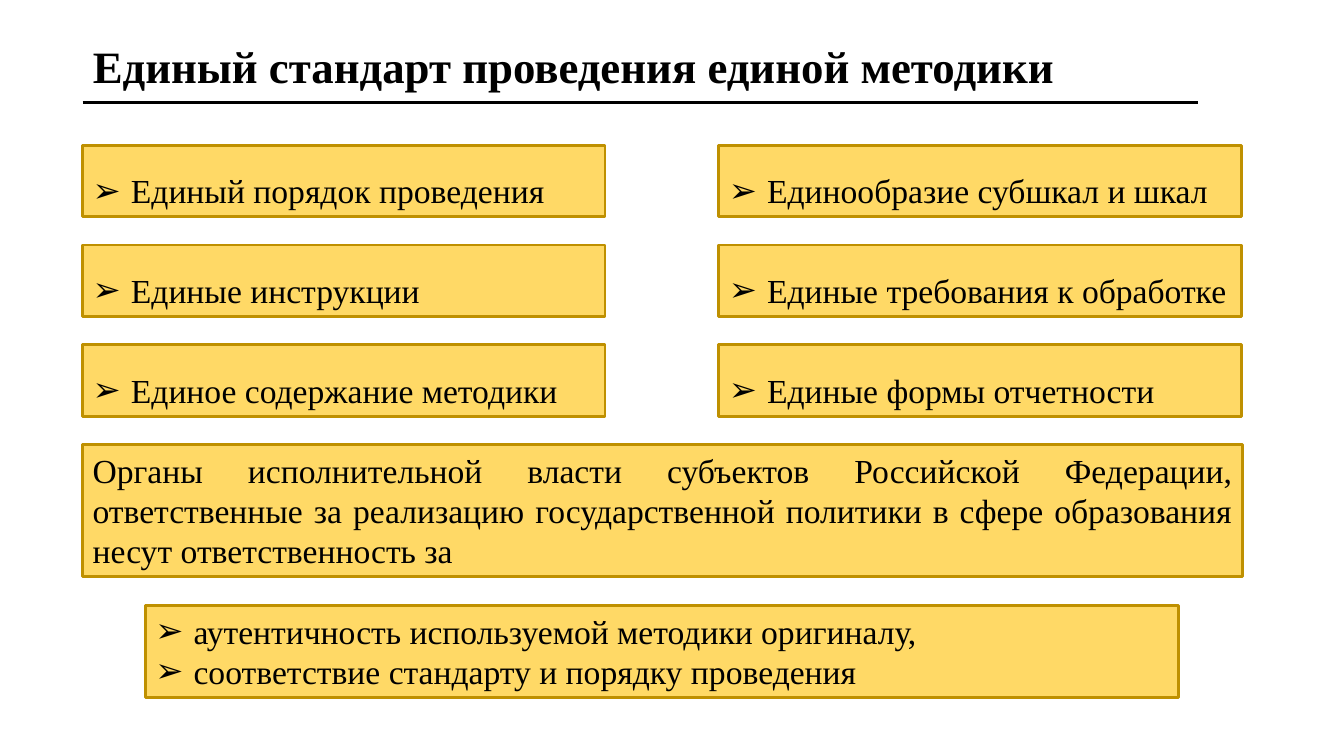
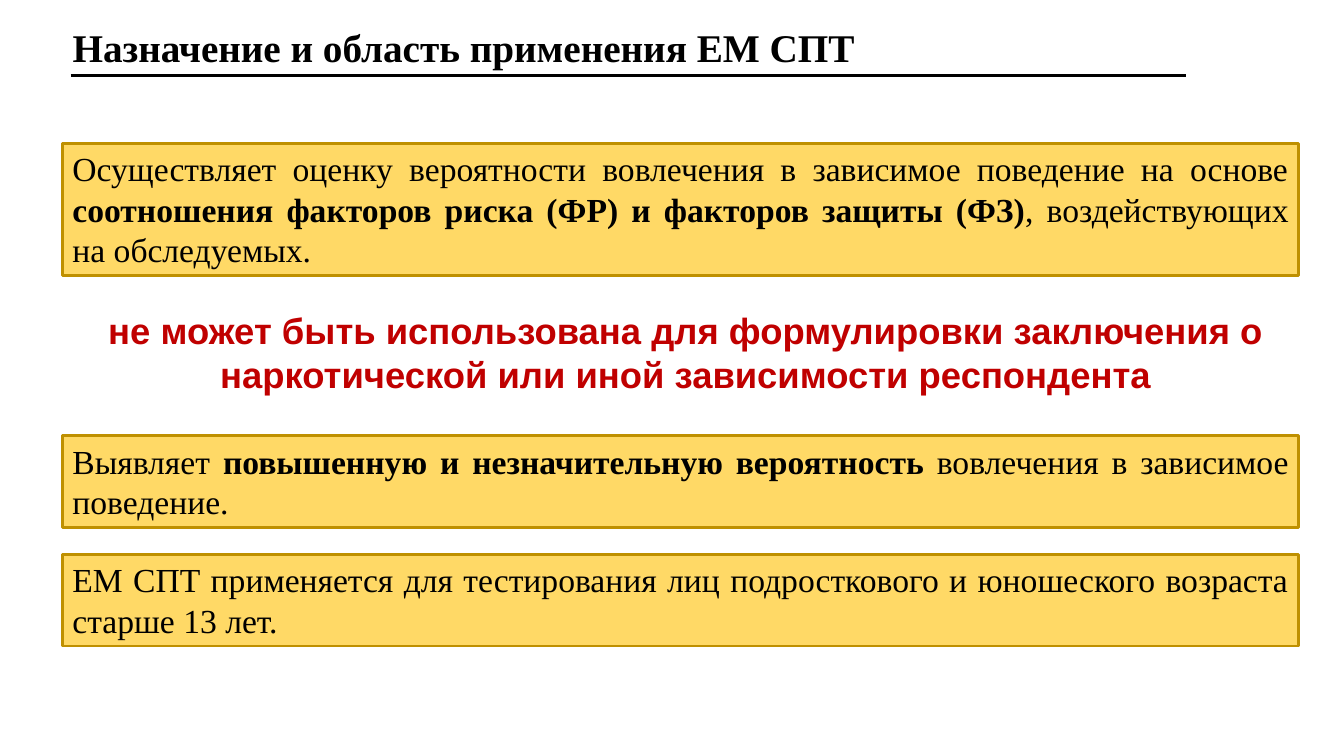
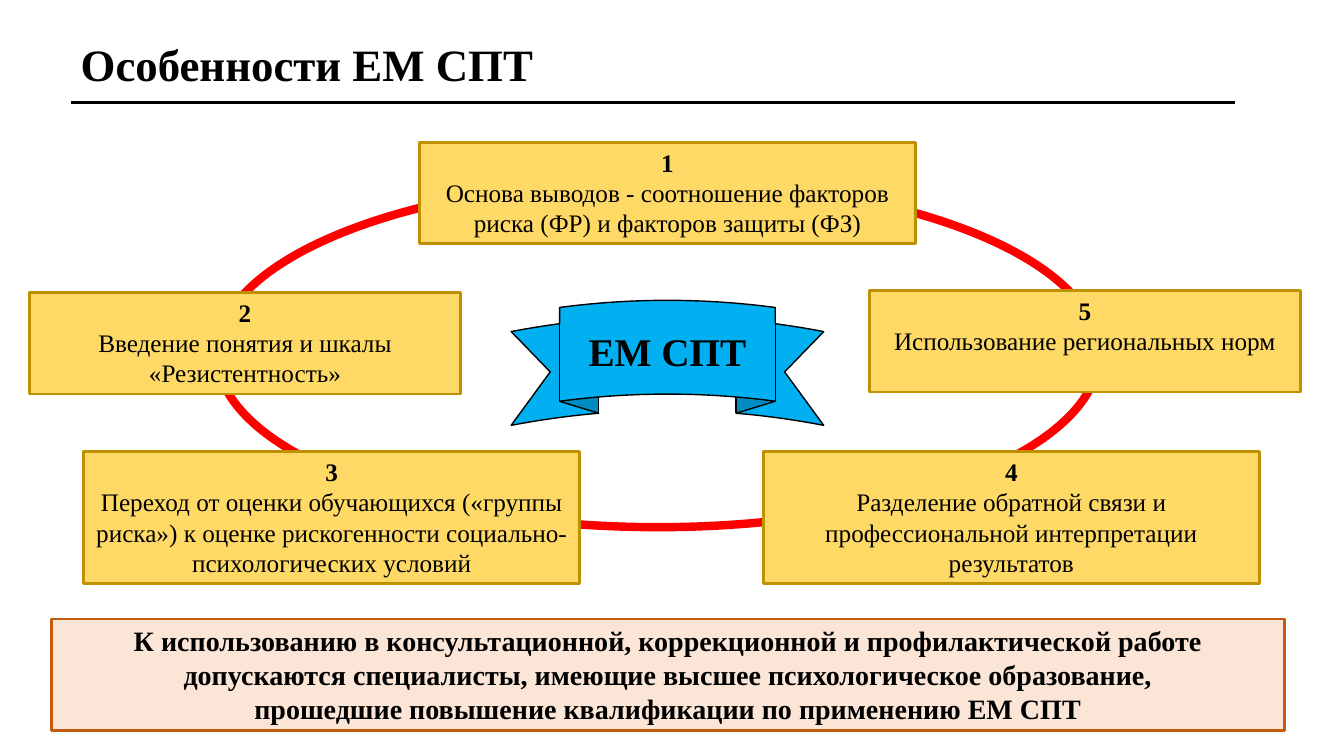
from dataclasses import dataclass

from pptx import Presentation
from pptx import util as u
from pptx.dml.color import RGBColor
from pptx.enum import shapes, text
from pptx.oxml import ns
from lxml import etree

# Shared style
COLORS = {
    "black": "000000",
    "gold": "FFD966",
    "dark_gold": "BF9000",
    "peach": "FBE5D6",
    "rust": "C55A11",
    "crimson": "C00000",
    "red": "FF0000",
    "sky": "00B0F0",
}
SERIF, SANS = "Times New Roman", "Arial"
BULLET, BULLET_INDENT = "➢", 0.38
TITLE_AND_BODY, TITLE_ONLY = 1, 5
LEFT, CENTER, JUSTIFY = (
    text.PP_ALIGN.LEFT, text.PP_ALIGN.CENTER, text.PP_ALIGN.JUSTIFY)


@dataclass(frozen=True)
class Area:
    left: float
    top: float
    width: float
    height: float

    def lengths(self) -> tuple:
        return tuple(u.Inches(n) for n in
                     (self.left, self.top, self.width, self.height))


@dataclass(frozen=True)
class Span:
    words: str
    bold: bool = False


@dataclass(frozen=True)
class TextStyle:
    size: int
    align: text.PP_ALIGN = LEFT
    font: str = SERIF
    color: str = "black"
    spacing: float = 1.0
    bullet: bool = False


@dataclass(frozen=True)
class Heading:
    words: str
    area: Area
    size: int
    rule_start: float
    rule_end: float
    rule_top: float


@dataclass(frozen=True)
class Card:
    number: int
    words: str
    area: Area


BODY = TextStyle(24, JUSTIFY)
BULLETS = TextStyle(24, bullet=True)
TALL_BULLETS = TextStyle(24, spacing=1.5, bullet=True)
CARD = TextStyle(18, CENTER)
BANNER = TextStyle(20, CENTER)
RIBBON = TextStyle(28, CENTER)
WARNING = TextStyle(26, CENTER, SANS, "crimson")


def rgb(name: str) -> RGBColor:
    return RGBColor.from_string(COLORS[name])


# Text
def add_bullet(para) -> None:
    props = para._p.get_or_add_pPr()
    props.set("marL", str(u.Inches(BULLET_INDENT)))
    props.set("indent", str(u.Inches(-BULLET_INDENT)))
    etree.SubElement(props, ns.qn("a:buFont"), typeface=SANS)
    etree.SubElement(props, ns.qn("a:buChar"), char=BULLET)


def write(box, paras: list[list[Span]], style: TextStyle,
          anchor=text.MSO_ANCHOR.TOP) -> None:
    frame = box.text_frame
    frame.word_wrap = True
    frame.auto_size = text.MSO_AUTO_SIZE.NONE
    frame.vertical_anchor = anchor
    for index, spans in enumerate(paras):
        para = frame.add_paragraph() if index else frame.paragraphs[0]
        para.alignment = style.align
        para.line_spacing = style.spacing
        para.space_before = u.Pt(0)
        if style.bullet:
            add_bullet(para)
        for span in spans:
            run = para.add_run()
            run.text = span.words
            run.font.name = style.font
            run.font.size = u.Pt(style.size)
            run.font.bold = span.bold
            run.font.color.rgb = rgb(style.color)


# Shapes
def place(box, area: Area) -> None:
    box.left, box.top, box.width, box.height = area.lengths()


def paint(box, fill: str | None, line: str, width: float = 2) -> None:
    box.shadow.inherit = False
    if fill:
        box.fill.solid()
        box.fill.fore_color.rgb = rgb(fill)
    else:
        box.fill.background()
    box.line.color.rgb = rgb(line)
    box.line.width = u.Pt(width)


def add_box(page, area: Area, paras: list[list[Span]], style: TextStyle,
            fill: str = "gold", line: str = "dark_gold") -> None:
    box = page.shapes.add_shape(shapes.MSO_SHAPE.RECTANGLE, *area.lengths())
    paint(box, fill, line)
    write(box, paras, style)


def add_page(deck, heading: Heading, layout: int = TITLE_ONLY):
    page = deck.slides.add_slide(deck.slide_layouts[layout])
    title = page.shapes.title
    place(title, heading.area)
    write(title, [[Span(heading.words, True)]], TextStyle(heading.size))
    top = u.Inches(heading.rule_top)
    rule = page.shapes.add_connector(
        shapes.MSO_CONNECTOR.STRAIGHT,
        u.Inches(heading.rule_start), top, u.Inches(heading.rule_end), top)
    rule.line.color.rgb = rgb("black")
    rule.line.width = u.Pt(2)
    etree.SubElement(rule._element.spPr, ns.qn("a:effectLst"))
    return page


# Slide 1: the single standard
def add_standard(deck) -> None:
    page = add_page(deck, Heading(
        "Единый стандарт проведения единой методики",
        Area(0.82, 0.33, 11, 0.64), 32, 0.82, 11.88, 1.02), TITLE_AND_BODY)
    columns = {
        0.82: ["Единый порядок проведения", "Единые инструкции",
               "Единое содержание методики"],
        7.13: ["Единообразие субшкал и шкал", "Единые требования к обработке",
               "Единые формы отчетности"],
    }
    for left, items in columns.items():
        for row, item in enumerate(items):
            add_box(page, Area(left, 1.44 + 0.99 * row, 5.18, 0.71),
                    [[Span(item)]], TALL_BULLETS)
    add_box(page, Area(0.82, 4.41, 11.5, 1.31), [[Span(
        "Органы исполнительной власти субъектов Российской Федерации, "
        "ответственные за реализацию государственной политики в сфере "
        "образования несут ответственность за")]], BODY)
    duties = page.placeholders[1]
    place(duties, Area(1.44, 6.01, 10.25, 0.91))
    paint(duties, "gold", "dark_gold")
    write(duties, [[Span("аутентичность используемой методики оригиналу,")],
                   [Span("соответствие стандарту и порядку проведения")]],
          BULLETS)


# Slide 2: purpose and scope
def add_purpose(deck) -> None:
    page = add_page(deck, Heading(
        "Назначение и область применения ЕМ СПТ",
        Area(0.62, 0.18, 11, 0.57), 28, 0.7, 11.76, 0.75))
    statements = [
        (1.42, 1.31, [
            Span("Осуществляет оценку вероятности вовлечения в зависимое "
                 "поведение на основе "),
            Span("соотношения факторов риска (ФР) и факторов защиты (ФЗ)",
                 True),
            Span(", воздействующих на обследуемых.")]),
        (4.32, 0.91, [
            Span("Выявляет "),
            Span("повышенную и незначительную вероятность ", True),
            Span("вовлечения в зависимое поведение.")]),
        (5.5, 0.91, [
            Span("ЕМ СПТ применяется для тестирования лиц подросткового и "
                 "юношеского возраста старше 13 лет.")]),
    ]
    for top, height, spans in statements:
        add_box(page, Area(0.62, top, 12.26, height), [spans], BODY)
    warning = page.shapes.add_textbox(*Area(0.95, 3.01, 11.71, 0.98).lengths())
    write(warning, [[Span(
        "не может быть использована для формулировки заключения о "
        "наркотической или иной зависимости респондента", True)]], WARNING)


# Slide 3: features around a ring
def add_features(deck) -> None:
    page = add_page(deck, Heading(
        "Особенности ЕМ СПТ",
        Area(0.7, 0.31, 11, 0.64), 32, 0.7, 12.25, 1.02))
    ring = page.shapes.add_shape(
        shapes.MSO_SHAPE.OVAL, *Area(2.15, 1.79, 8.75, 3.44).lengths())
    paint(ring, None, "red", 6)
    ribbon = page.shapes.add_shape(
        shapes.MSO_SHAPE.CURVED_UP_RIBBON,
        *Area(5.07, 2.98, 3.1, 1.24).lengths())
    for index, value in enumerate((0.25, 0.69, 0.12)):
        ribbon.adjustments[index] = value
    paint(ribbon, "sky", "black", 1)
    write(ribbon, [[Span("ЕМ СПТ", True)]], RIBBON, text.MSO_ANCHOR.MIDDLE)

    cards = [
        Card(1, "Основа выводов - соотношение факторов риска (ФР) и "
                "факторов защиты (ФЗ)", Area(4.16, 1.41, 4.92, 1.01)),
        Card(2, "Введение понятия и шкалы «Резистентность»",
             Area(0.29, 2.9, 4.28, 1.01)),
        Card(3, "Переход от оценки обучающихся («группы риска») к оценке "
                "рискогенности социально-психологических условий",
             Area(0.83, 4.48, 4.92, 1.31)),
        Card(4, "Разделение обратной связи и профессиональной "
                "интерпретации результатов", Area(7.57, 4.48, 4.92, 1.31)),
        Card(5, "Использование региональных норм",
             Area(8.62, 2.88, 4.28, 1.01)),
    ]
    for card in cards:
        add_box(page, card.area,
                [[Span(str(card.number), True)], [Span(card.words)]], CARD)

    requirements = [
        "К использованию в консультационной, коррекционной и "
        "профилактической работе",
        "допускаются специалисты, имеющие высшее психологическое образование,",
        "прошедшие повышение квалификации по применению ЕМ СПТ",
    ]
    add_box(page, Area(0.51, 6.14, 12.23, 1.11),
            [[Span(line, True)] for line in requirements],
            BANNER, "peach", "rust")


def main() -> None:
    deck = Presentation()
    deck.slide_width, deck.slide_height = u.Inches(13.33), u.Inches(7.5)
    add_standard(deck)
    add_purpose(deck)
    add_features(deck)
    deck.save("out.pptx")


if __name__ == "__main__":
    main()
